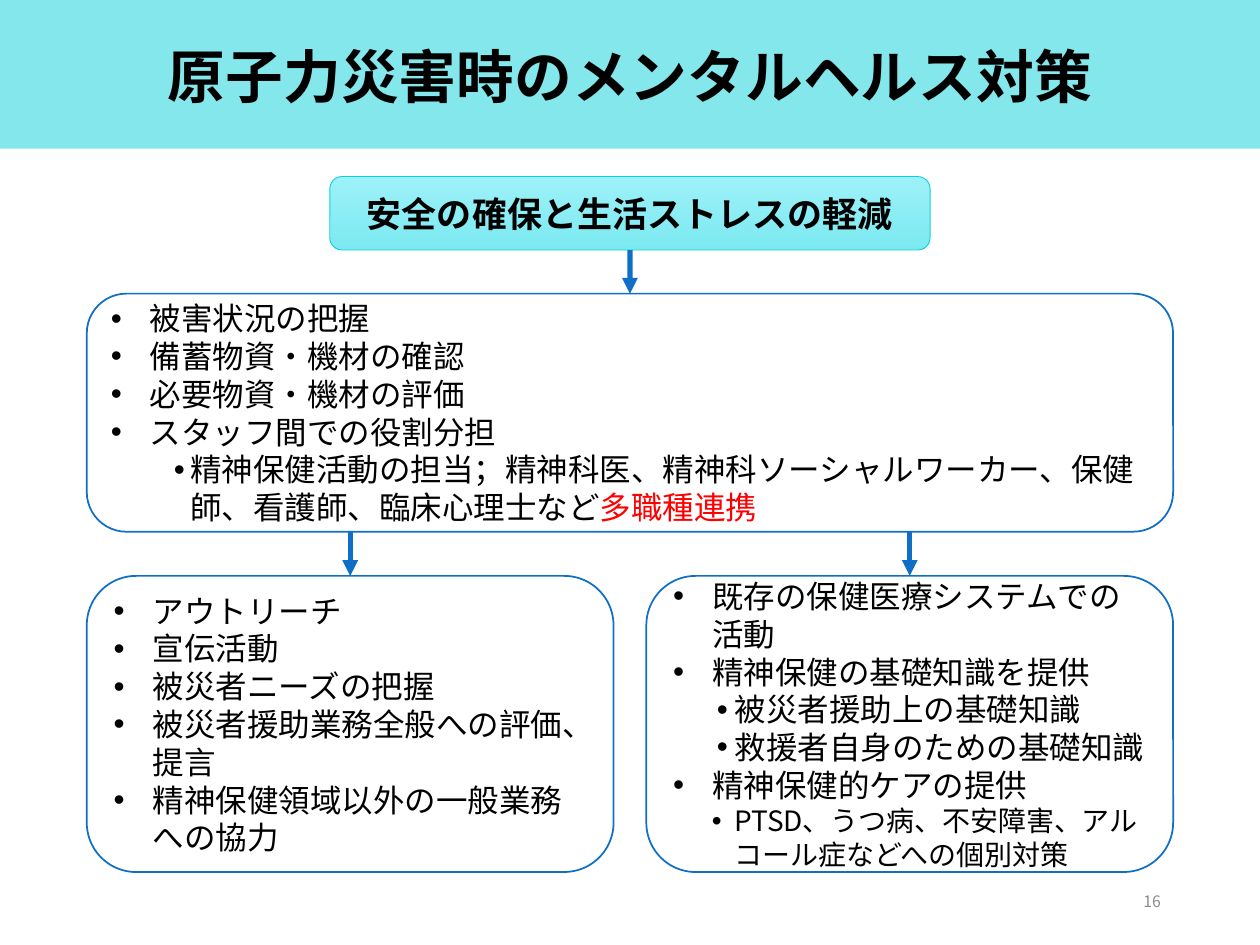
from dataclasses import dataclass

from pptx import Presentation
from pptx.dml.color import RGBColor
from pptx.enum.shapes import MSO_CONNECTOR as Connector, MSO_SHAPE as Shape
from pptx.enum.text import MSO_ANCHOR as Anchor, PP_ALIGN as Align
from pptx.oxml.ns import qn
from pptx.util import Cm, Pt
from lxml.etree import SubElement

FONT = "Noto Sans CJK JP"
BLACK = RGBColor(0x00, 0x00, 0x00)
WHITE = RGBColor(0xFF, 0xFF, 0xFF)
RED = RGBColor(0xFF, 0x00, 0x00)
GRAY = RGBColor(0x8C, 0x8C, 0x8C)
BLUE = RGBColor(0x0F, 0x6F, 0xC6)
TEAL = RGBColor(0x0B, 0xD0, 0xD9)
GOAL_TOP = RGBColor(0x9D, 0xF1, 0xF8)
GOAL_BOTTOM = RGBColor(0x7C, 0xE9, 0xF1)

SLIDE_W, SLIDE_H = 25.4, 19.05
MARGIN = 1.75
CONTENT_W = SLIDE_W - 2 * MARGIN
GUTTER = 0.66
COLUMN_W = (CONTENT_W - GUTTER) / 2
LINE_PITCH = 1.2


@dataclass
class Item:
    text: str
    indent: float = 0.79
    hang: float = 0.79
    level: int = 0
    size: int = 18
    emphasis: str = ""


OVERVIEW = [
    Item("被害状況の把握"),
    Item("備蓄物資・機材の確認"),
    Item("必要物資・機材の評価"),
    Item("スタッフ間での役割分担"),
    Item("精神保健活動の担当；精神科医、精神科ソーシャルワーカー、保健師、看護師、臨床心理士など",
         indent=1.6, hang=0.33, level=1, emphasis="多職種連携"),
]
OUTREACH = [
    Item("アウトリーチ"),
    Item("宣伝活動"),
    Item("被災者ニーズの把握"),
    Item("被災者援助業務全般への評価、提言"),
    Item("精神保健領域以外の一般業務への協力"),
]
CARE = [
    Item("既存の保健医療システムでの活動"),
    Item("精神保健の基礎知識を提供"),
    Item("被災者援助上の基礎知識", indent=1.24, hang=0.36, level=1),
    Item("救援者自身のための基礎知識", indent=1.24, hang=0.36, level=1),
    Item("精神保健的ケアの提供"),
    Item("PTSD、うつ病、不安障害、アルコール症などへの個別対策",
         indent=1.24, hang=0.46, level=1, size=16),
]


def write(paragraph, text, size=18, color=BLACK, bold=False, align=Align.LEFT):
    paragraph.alignment = align
    run = paragraph.add_run()
    run.text = text
    run.font.size = Pt(size)
    run.font.bold = bold
    run.font.color.rgb = color
    run.font.name = FONT
    SubElement(run.font._element, qn("a:ea"), typeface=FONT)


def add_bullet(paragraph, item):
    paragraph.level = item.level
    paragraph.line_spacing = Pt(round(item.size * LINE_PITCH, 1))
    properties = paragraph._p.get_or_add_pPr()
    properties.set("marL", str(Cm(item.indent)))
    properties.set("indent", str(-Cm(item.hang)))
    SubElement(properties, qn("a:buFont"), typeface="Arial")
    SubElement(properties, qn("a:buChar"), char="•")


def add_panel(slide, kind, left, top, width, height, line_color=None, line_width=1):
    panel = slide.shapes.add_shape(kind, Cm(left), Cm(top), Cm(width), Cm(height))
    panel.shadow.inherit = False
    panel.text_frame.word_wrap = True
    panel.text_frame.vertical_anchor = Anchor.MIDDLE
    if line_color is None:
        panel.line.fill.background()
    else:
        panel.line.color.rgb = line_color
        panel.line.width = Pt(line_width)
    return panel


def add_label(slide, left, top, width, height, text, **text_format):
    label = slide.shapes.add_textbox(Cm(left), Cm(top), Cm(width), Cm(height))
    label.text_frame.word_wrap = True
    label.text_frame.vertical_anchor = Anchor.MIDDLE
    paragraph = label.text_frame.paragraphs[0]
    write(paragraph, text, **text_format)
    return paragraph


def add_title_band(slide, left, top, width, height):
    band = add_panel(slide, Shape.RECTANGLE, left, top, width, height)
    band.fill.solid()
    band.fill.fore_color.rgb = TEAL
    tint = band._element.spPr.find(qn("a:solidFill")).find(qn("a:srgbClr"))
    SubElement(tint, qn("a:alpha"), val="50000")
    heading = add_label(slide, left + MARGIN, top + 0.53, width - 2 * MARGIN, 2.16,
                        "原子力災害時のメンタルヘルス対策",
                        size=33, bold=True, align=Align.CENTER)
    heading.line_spacing = 0.9


def add_goal(slide, left, top, width, height):
    goal = add_panel(slide, Shape.ROUNDED_RECTANGLE, left, top, width, height, TEAL, 0.5)
    goal.fill.gradient()
    goal.fill.gradient_angle = 270
    for stop, color, position in zip(goal.fill.gradient_stops, (GOAL_TOP, GOAL_BOTTOM), (0, 1)):
        stop.color.rgb = color
        stop.position = position
    write(goal.text_frame.paragraphs[0], "安全の確保と生活ストレスの軽減",
          size=20, bold=True, align=Align.CENTER)
    return goal


def add_measures(slide, left, top, width, height, items):
    measures = add_panel(slide, Shape.ROUNDED_RECTANGLE, left, top, width, height, BLUE)
    measures.fill.solid()
    measures.fill.fore_color.rgb = WHITE
    frame = measures.text_frame
    for number, item in enumerate(items):
        paragraph = frame.add_paragraph() if number else frame.paragraphs[0]
        add_bullet(paragraph, item)
        write(paragraph, item.text, size=item.size)
        if item.emphasis:
            write(paragraph, item.emphasis, size=item.size, color=RED)
    return measures


def add_down_arrow(slide, source, target, joined=False):
    """Drop from the source's bottom edge to the top middle of the target."""
    middle = target.left + target.width // 2
    arrow = slide.shapes.add_connector(
        Connector.STRAIGHT, middle, source.top + source.height, middle, target.top)
    if joined:
        arrow.begin_connect(source, 2)
    arrow.end_connect(target, 0)
    arrow.line.color.rgb = BLUE
    arrow.line.width = Pt(3)
    SubElement(arrow.line._get_or_add_ln(), qn("a:tailEnd"), type="triangle")
    SubElement(arrow._element.spPr, qn("a:effectLst"))


def main():
    deck = Presentation()
    deck.slide_width, deck.slide_height = Cm(SLIDE_W), Cm(SLIDE_H)
    slide = deck.slides.add_slide(deck.slide_layouts[6])

    add_title_band(slide, 0, 0, SLIDE_W, 3)
    overview = add_measures(slide, MARGIN, 5.92, CONTENT_W, 4.8, OVERVIEW)
    branches = [
        add_measures(slide, MARGIN + column * (COLUMN_W + GUTTER), 11.61, COLUMN_W, 5.97, items)
        for column, items in enumerate((OUTREACH, CARE))
    ]
    goal = add_goal(slide, 6.65, 3.56, 12.1, 1.48)

    add_down_arrow(slide, goal, overview, joined=True)
    for branch in branches:
        add_down_arrow(slide, overview, branch)
    add_label(slide, 17.93, 17.65, 5.72, 1.02, "16", size=9, color=GRAY, align=Align.RIGHT)

    deck.save("out.pptx")


if __name__ == "__main__":
    main()
